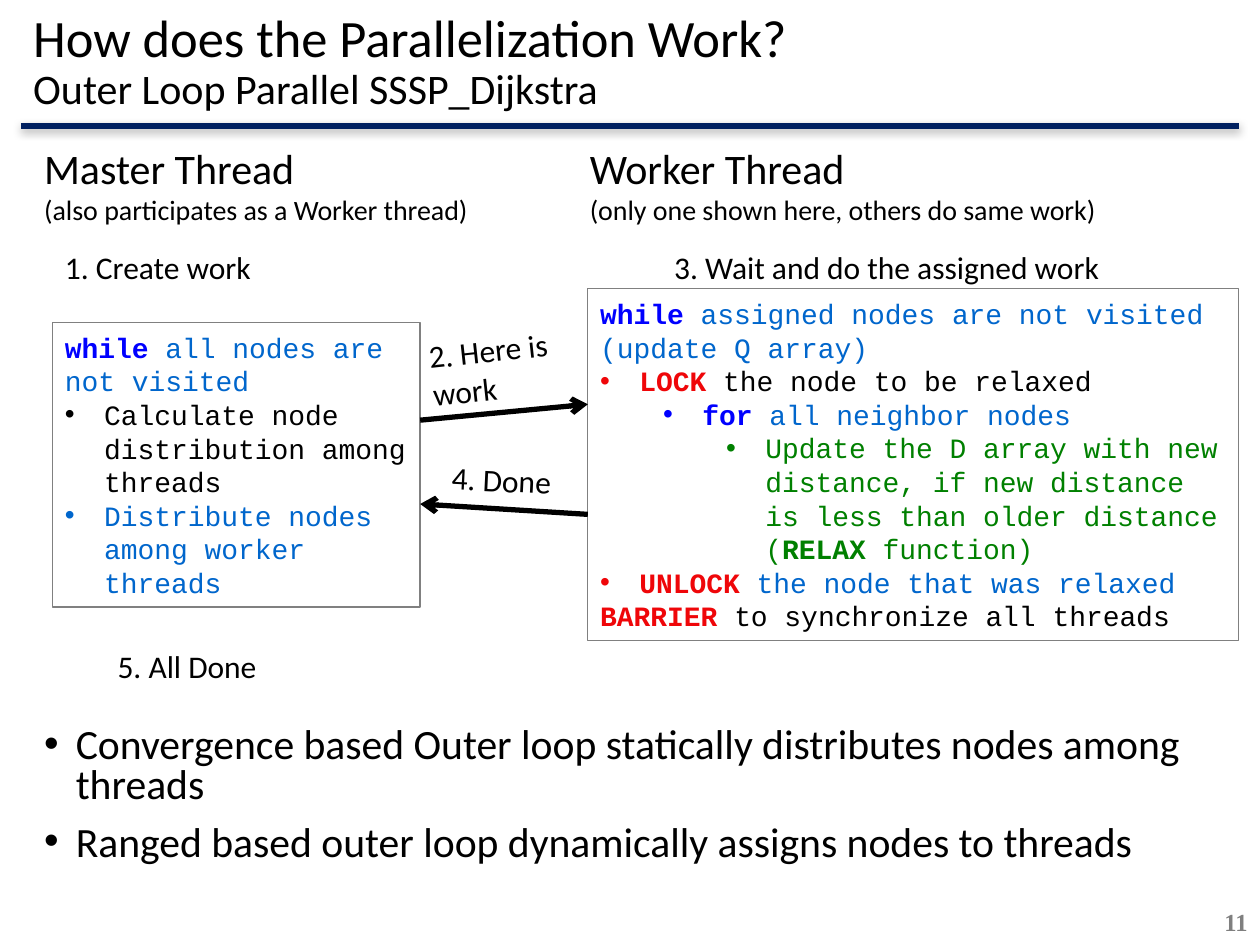
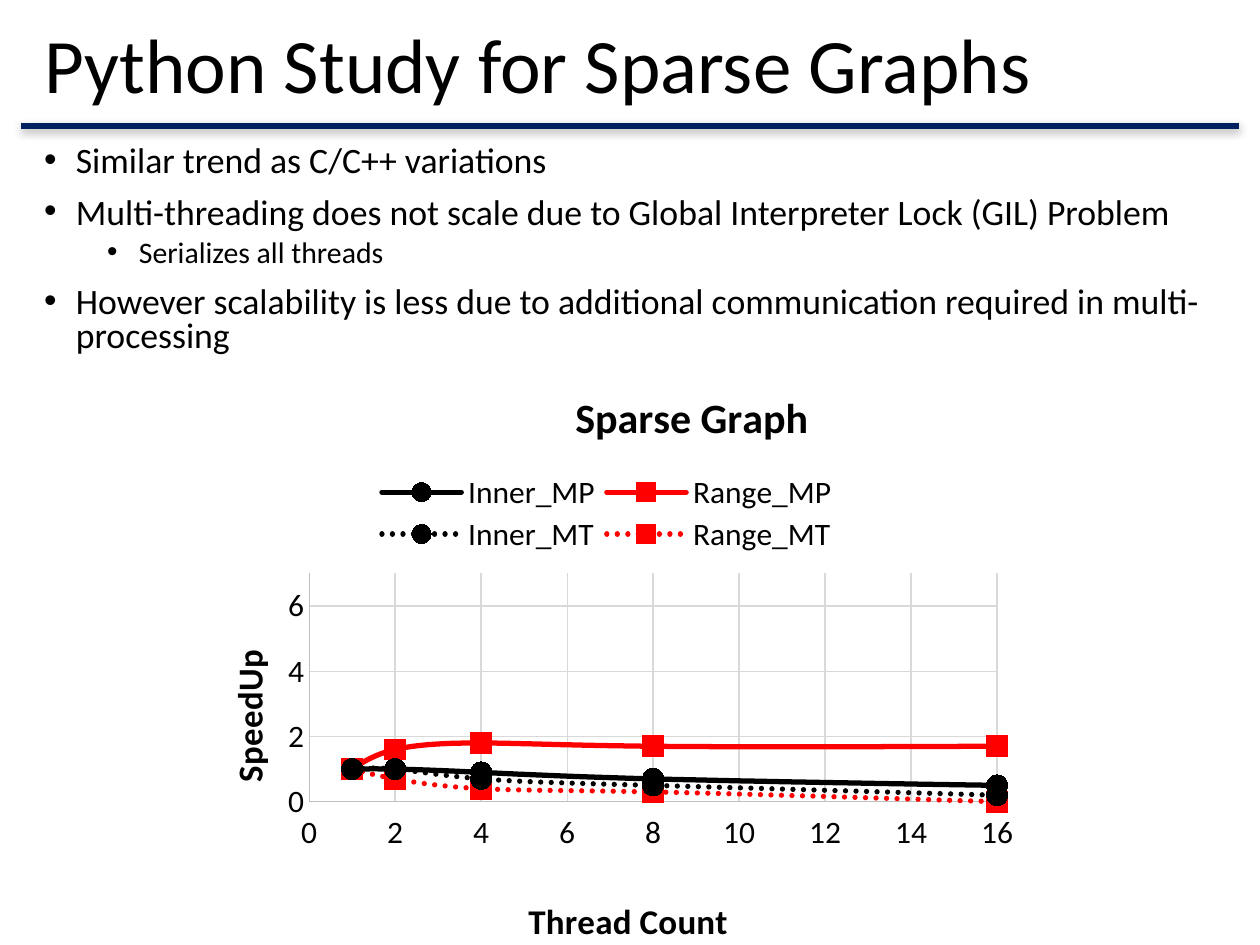
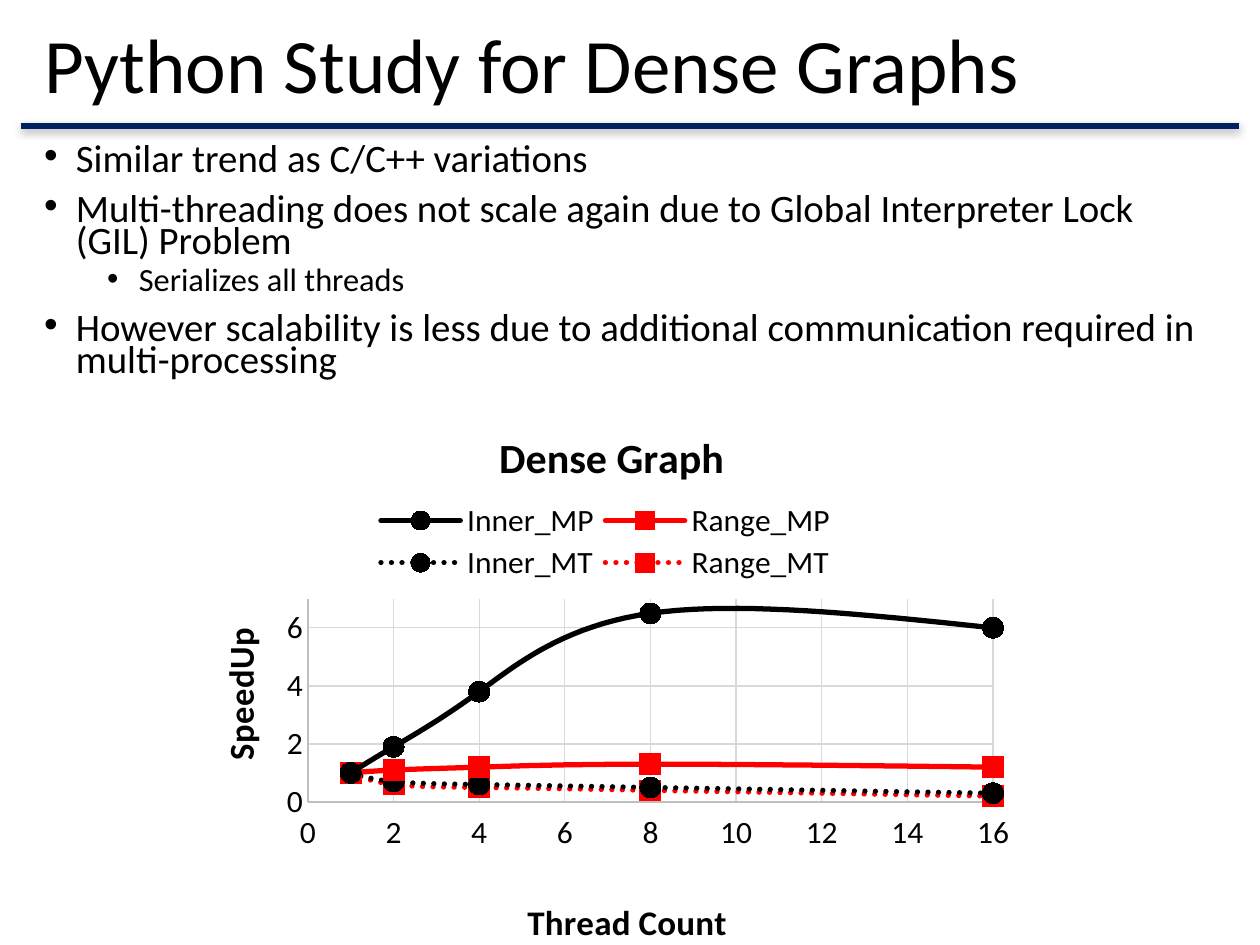
from dataclasses import dataclass

from lxml import etree
from pptx import Presentation
from pptx.chart.data import XyChartData
from pptx.dml.color import RGBColor
from pptx.enum.chart import (XL_CHART_TYPE, XL_LEGEND_POSITION, XL_MARKER_STYLE,
                             XL_TICK_LABEL_POSITION, XL_TICK_MARK)
from pptx.enum.dml import MSO_LINE
from pptx.enum.shapes import MSO_CONNECTOR, MSO_SHAPE
from pptx.enum.text import MSO_ANCHOR, PP_ALIGN
from pptx.oxml.ns import qn
from pptx.util import Cm, Pt

BLACK = RGBColor(0x00, 0x00, 0x00)
NAVY = RGBColor(0x00, 0x20, 0x60)
KEYWORD_BLUE = RGBColor(0x00, 0x00, 0xFF)
CODE_BLUE = RGBColor(0x00, 0x66, 0xCC)
LOCK_RED = RGBColor(0xEF, 0x06, 0x09)
RELAX_GREEN = RGBColor(0x00, 0x80, 0x00)
RANGE_RED = RGBColor(0xFF, 0x00, 0x00)
BOX_GRAY = RGBColor(0x80, 0x80, 0x80)
PAGE_GRAY = RGBColor(0x7F, 0x7F, 0x7F)
AXIS_GRAY = RGBColor(0xBF, 0xBF, 0xBF)
GRID_GRAY = RGBColor(0xD9, 0xD9, 0xD9)

BODY_FONT, CODE_FONT, PAGE_FONT = "Calibri", "Courier New", "Times New Roman"
TOP, MIDDLE = MSO_ANCHOR.TOP, MSO_ANCHOR.MIDDLE
LEFT, RIGHT = PP_ALIGN.LEFT, PP_ALIGN.RIGHT
STRAIGHT, RECTANGLE = MSO_CONNECTOR.STRAIGHT, MSO_SHAPE.RECTANGLE
CIRCLE, SQUARE = XL_MARKER_STYLE.CIRCLE, XL_MARKER_STYLE.SQUARE
SOLID, DOTTED = MSO_LINE.SOLID, MSO_LINE.ROUND_DOT
NO_TICK, LOW_LABELS = XL_TICK_MARK.NONE, XL_TICK_LABEL_POSITION.LOW
LEGEND_TOP = XL_LEGEND_POSITION.TOP
SMOOTH_SCATTER = XL_CHART_TYPE.XY_SCATTER_SMOOTH

LEVEL_STEP = 1.27
BODY_HANG, CODE_HANG = 0.64, 0.79
THREAD_COUNTS = (1, 2, 4, 8, 16)


@dataclass(frozen=True)
class Box:
    """Left, top, width and height in centimetres."""
    left: float
    top: float
    width: float
    height: float

    def lengths(self) -> tuple:
        return Cm(self.left), Cm(self.top), Cm(self.width), Cm(self.height)


@dataclass(frozen=True)
class Span:
    text: str
    color: RGBColor = BLACK
    bold: bool = False


@dataclass(frozen=True)
class Line:
    """One paragraph; a level makes it a bullet."""
    spans: tuple
    level: int | None = None
    size: float | None = None
    before: float = 0


@dataclass(frozen=True)
class Layout:
    """Fractions of the chart's width and height."""
    x: float
    y: float
    w: float | None = None
    h: float | None = None


@dataclass(frozen=True)
class SeriesStyle:
    name: str
    color: RGBColor
    marker: int
    dash: int


@dataclass(frozen=True)
class Study:
    graph: str
    bullets: tuple
    bullet_size: float
    bullet_spacing: float
    bullet_box: Box
    chart_box: Box
    plot: Layout
    legend: Layout
    heading: Layout
    thread_title: Layout
    speed_title: Layout
    speedups: tuple


SERIES = (
    SeriesStyle("Inner_MP", BLACK, CIRCLE, SOLID),
    SeriesStyle("Range_MP", RANGE_RED, SQUARE, SOLID),
    SeriesStyle("Inner_MT", BLACK, CIRCLE, DOTTED),
    SeriesStyle("Range_MT", RANGE_RED, SQUARE, DOTTED),
)

TREND = "Similar trend as C/C++ variations"
SERIALIZES = "Serializes all threads"
SCALABILITY = ("However scalability is less due to additional communication "
               "required in multi-processing")

STUDIES = (
    Study(
        "Sparse",
        ((0, TREND),
         (0, "Multi-threading does not scale due to Global Interpreter Lock (GIL) Problem"),
         (1, SERIALIZES), (0, SCALABILITY)),
        20.4, 0.8, Box(0.64, 2.82, 24.13, 4.55), Box(3.71, 7.34, 17.04, 11.89),
        plot=Layout(0.148, 0.358, 0.814, 0.391), legend=Layout(0.22, 0.18, 0.56, 0.15),
        heading=Layout(0.454, 0.03), thread_title=Layout(0.4, 0.9),
        speed_title=Layout(0.04, 0.48),
        speedups=((1, 1, 0.9, 0.7, 0.5), (1, 1.6, 1.8, 1.7, 1.7),
                  (1, 1, 0.7, 0.5, 0.2), (1, 0.7, 0.4, 0.3, 0)),
    ),
    Study(
        "Dense",
        ((0, TREND),
         (0, "Multi-threading does not scale again due to Global Interpreter Lock (GIL) Problem"),
         (1, SERIALIZES), (0, SCALABILITY)),
        22.2, 0.7, Box(0.64, 2.82, 24.13, 5.26), Box(3.71, 7.9, 16.99, 11.35),
        plot=Layout(0.147, 0.373, 0.813, 0.366), legend=Layout(0.22, 0.19, 0.56, 0.16),
        heading=Layout(0.365, 0.055), thread_title=Layout(0.4, 0.9),
        speed_title=Layout(0.03, 0.417),
        speedups=((1, 1.9, 3.8, 6.5, 6), (1, 1.1, 1.2, 1.3, 1.2),
                  (1, 0.7, 0.6, 0.5, 0.3), (1, 0.6, 0.5, 0.4, 0.2)),
    ),
)

MASTER_CODE = (
    Line((Span("while ", KEYWORD_BLUE, True), Span("all nodes are not visited", CODE_BLUE))),
    Line((Span("Calculate node distribution among threads"),), 0),
    Line((Span("Distribute nodes among worker threads", CODE_BLUE),), 0),
)
WORKER_CODE = (
    Line((Span("while ", KEYWORD_BLUE, True),
          Span("assigned nodes are not visited (update Q array)", CODE_BLUE))),
    Line((Span("LOCK", LOCK_RED, True), Span(" the node to be relaxed")), 0),
    Line((Span("for ", KEYWORD_BLUE, True), Span("all neighbor nodes", CODE_BLUE)), 1),
    Line((Span("Update the D array with new distance, if new distance "
               "is less than older distance (", RELAX_GREEN),
          Span("RELAX", RELAX_GREEN, True), Span(" function)", RELAX_GREEN)), 2),
    Line((Span("UNLOCK", LOCK_RED, True), Span(" the node that was relaxed", CODE_BLUE)), 0),
    Line((Span("BARRIER ", LOCK_RED, True), Span("to synchronize all threads"))),
)


def plain(text: str, size: float | None = None) -> Line:
    return Line((Span(text),), size=size)


def set_font(font, size: float, color: RGBColor = BLACK, bold: bool = False,
             name: str = BODY_FONT) -> None:
    font.name, font.size, font.bold = name, Pt(size), bold
    font.color.rgb = color


def set_line(line, color: RGBColor, width: float) -> None:
    line.color.rgb = color
    line.width = Pt(width)


def write_text(frame, lines: tuple, *, size: float = 18, font: str = BODY_FONT,
               anchor=TOP, align=LEFT, spacing: float = 1.0,
               hang: float = BODY_HANG) -> None:
    frame.word_wrap = True
    frame.vertical_anchor = anchor
    for index, line in enumerate(lines):
        paragraph = frame.add_paragraph() if index else frame.paragraphs[0]
        paragraph.alignment = align
        paragraph.line_spacing = spacing
        if index and line.before:
            paragraph.space_before = Pt(line.before)
        if line.level is not None:
            paragraph.level = line.level
            properties = paragraph._p.get_or_add_pPr()
            properties.set("marL", str(Cm(line.level * LEVEL_STEP + hang)))
            properties.set("indent", str(-Cm(hang)))
            etree.SubElement(properties, qn("a:buFont")).set("typeface", "Arial")
            etree.SubElement(properties, qn("a:buChar")).set("char", "•")
        for span in line.spans:
            run = paragraph.add_run()
            run.text = span.text
            set_font(run.font, line.size or size, span.color, span.bold, font)


def add_text(slide, box: Box, *lines: Line, rotation: float = 0, **text_format) -> None:
    text_box = slide.shapes.add_textbox(*box.lengths())
    text_box.rotation = rotation
    write_text(text_box.text_frame, lines, **text_format)


def add_bullets(slide, box: Box, bullets: tuple, size: float, spacing: float) -> None:
    """Second-level bullets are smaller and closer to the line above."""
    lines = (Line((Span(text),), level, round(size * 5 / 6, 1) if level else size,
                  5 if level else 10)
             for level, text in bullets)
    add_text(slide, box, *lines, spacing=spacing)


def add_code_box(slide, box: Box, lines: tuple) -> None:
    code_box = slide.shapes.add_shape(RECTANGLE, *box.lengths())
    code_box.shadow.inherit = False
    code_box.fill.background()
    set_line(code_box.line, BOX_GRAY, 0.75)
    write_text(code_box.text_frame, lines, size=16, font=CODE_FONT,
               anchor=MIDDLE, hang=CODE_HANG)


def add_line(slide, start: tuple, end: tuple, color: RGBColor, *,
             arrow: bool = False, shadow: bool = False) -> None:
    connector = slide.shapes.add_connector(
        STRAIGHT, *(Cm(value) for value in (*start, *end)))
    set_line(connector.line, color, 3)
    properties = connector.element.spPr
    if arrow:
        etree.SubElement(properties.find(qn("a:ln")), qn("a:tailEnd")).set("type", "arrow")
    effects = etree.SubElement(properties, qn("a:effectLst"))
    if shadow:
        outer = etree.SubElement(effects, qn("a:outerShdw"), blurRad=str(Pt(5)),
                                 dist=str(Pt(1.8)), dir="5400000", rotWithShape="0")
        shade = etree.SubElement(outer, qn("a:srgbClr"), val=str(BLACK))
        etree.SubElement(shade, qn("a:alpha"), val="35000")


def add_titled_slide(deck, box: Box, *title_lines: Line):
    slide = deck.slides.add_slide(deck.slide_layouts[6])
    add_line(slide, (0.42, 2.54), (24.98, 2.54), NAVY, shadow=True)
    add_text(slide, box, *title_lines, size=44, anchor=MIDDLE, spacing=0.9)
    return slide


def place(part, layout: Layout) -> None:
    """Give a chart part a fixed position; the plot area is placed by its inner edge."""
    for old in part.findall(qn("c:layout")):
        part.remove(old)
    holder = etree.Element(qn("c:layout"))
    manual = etree.SubElement(holder, qn("c:manualLayout"))
    overlay = part.find(qn("c:overlay"))
    if overlay is None:
        part.insert(0, holder)
        etree.SubElement(manual, qn("c:layoutTarget")).set("val", "inner")
    else:
        overlay.addprevious(holder)
    for mode in ("xMode", "yMode"):
        etree.SubElement(manual, qn(f"c:{mode}")).set("val", "edge")
    for key in ("x", "y", "w", "h"):
        value = getattr(layout, key)
        if value is not None:
            etree.SubElement(manual, qn(f"c:{key}")).set("val", str(value))


def add_chart_title(title, text: str, size: float, layout: Layout) -> None:
    run = title.text_frame.paragraphs[0].add_run()
    run.text = text
    set_font(run.font, size, bold=True)
    place(title.element, layout)


def style_axis(axis, name: str, maximum: float, layout: Layout) -> None:
    axis.minimum_scale, axis.maximum_scale, axis.major_unit = 0, maximum, 2
    axis.major_tick_mark = axis.minor_tick_mark = NO_TICK
    axis.has_major_gridlines = True
    set_line(axis.major_gridlines.format.line, GRID_GRAY, 0.75)
    set_line(axis.format.line, AXIS_GRAY, 0.75)
    set_font(axis.tick_labels.font, 18)
    add_chart_title(axis.axis_title, name, 20, layout)


def add_speedup_chart(slide, study: Study) -> None:
    data = XyChartData()
    for style, speedups in zip(SERIES, study.speedups):
        series_data = data.add_series(style.name)
        for threads, speedup in zip(THREAD_COUNTS, speedups):
            series_data.add_data_point(threads, speedup)
    chart = slide.shapes.add_chart(SMOOTH_SCATTER, *study.chart_box.lengths(), data).chart
    set_font(chart.font, 10)

    chart.has_title = True
    add_chart_title(chart.chart_title, f"{study.graph} Graph", 24, study.heading)
    chart.has_legend = True
    chart.legend.position = LEGEND_TOP
    chart.legend.include_in_layout = False
    set_font(chart.legend.font, 18)
    style_axis(chart.category_axis, "Thread Count", 16, study.thread_title)
    style_axis(chart.value_axis, "SpeedUp", 7, study.speed_title)
    chart.category_axis.tick_label_position = LOW_LABELS
    speed_body = chart.value_axis.axis_title.element.find(f".//{qn('a:bodyPr')}")
    speed_body.set("rot", "-5400000")
    speed_body.set("vert", "horz")

    plot = chart.plots[0]
    plot.vary_by_categories = False
    for series, style in zip(plot.series, SERIES):
        set_line(series.format.line, style.color, 3)
        series.format.line.dash_style = style.dash
        series.marker.style, series.marker.size = style.marker, 12
        series.marker.format.fill.solid()
        series.marker.format.fill.fore_color.rgb = style.color
        set_line(series.marker.format.line, style.color, 0.75)
    for smooth in chart.element.xpath(".//c:ser/c:smooth"):
        smooth.set("val", "1")
    for stroke in chart.element.xpath(".//c:ser/c:spPr/a:ln"):
        stroke.set("cap", "rnd")
    place(chart.element.xpath(".//c:plotArea")[0], study.plot)
    place(chart.element.xpath(".//c:legend")[0], study.legend)


def add_parallelization_slide(deck) -> None:
    slide = add_titled_slide(deck, Box(0.42, 0, 24.56, 2.54),
                             plain("How does the Parallelization Work?", 30),
                             plain("Outer Loop Parallel SSSP_Dijkstra", 24))
    add_code_box(slide, Box(1.06, 6.5, 7.41, 5.74), MASTER_CODE)
    add_code_box(slide, Box(11.85, 5.82, 13.12, 7.09), WORKER_CODE)
    for box, thread, remark in (
        (Box(0.64, 2.74, 9.31, 1.96), "Master Thread",
         "(also participates as a Worker thread)"),
        (Box(11.64, 2.74, 13.34, 1.96), "Worker Thread",
         "(only one shown here, others do same work)"),
    ):
        add_text(slide, box, plain(thread, 24), plain(remark, 16))
    for box, rotation, *step in (
        (Box(1.06, 4.87, 7.41, 1.02), 0, "1. Create work"),
        (Box(8.43, 6.53, 3.25, 1.8), -6.2, "2. Here is", "work"),
        (Box(13.34, 4.87, 10.16, 1.02), 0, "3. Wait and do the assigned work"),
        (Box(8.86, 9.17, 2.77, 1.02), 2.9, "4. Done"),
        (Box(2.12, 12.91, 5.26, 1.02), 0, "5. All Done"),
    ):
        add_text(slide, box, *map(plain, step), rotation=rotation)
    add_line(slide, (8.47, 8.47), (11.85, 8.15), BLACK, arrow=True)
    add_line(slide, (11.85, 10.37), (8.47, 10.16), BLACK, arrow=True)
    add_text(slide, Box(19.47, 18.16, 5.93, 0.89), Line((Span("11", PAGE_GRAY, True),)),
             size=14, font=PAGE_FONT, align=RIGHT)
    add_bullets(slide, Box(0.64, 14.55, 24.13, 3.45), (
        (0, "Convergence based Outer loop statically distributes nodes among threads"),
        (0, "Ranged based outer loop dynamically assigns nodes to threads"),
    ), 23.8, 0.8)


def add_study_slide(deck, study: Study) -> None:
    slide = add_titled_slide(deck, Box(0.64, 0.21, 23.28, 2.33),
                             plain(f"Python Study for {study.graph} Graphs"))
    add_speedup_chart(slide, study)
    add_bullets(slide, study.bullet_box, study.bullets,
                study.bullet_size, study.bullet_spacing)


def main() -> None:
    deck = Presentation()
    deck.slide_width, deck.slide_height = Cm(25.4), Cm(19.05)
    add_parallelization_slide(deck)
    for study in STUDIES:
        add_study_slide(deck, study)
    deck.save("out.pptx")


if __name__ == "__main__":
    main()
